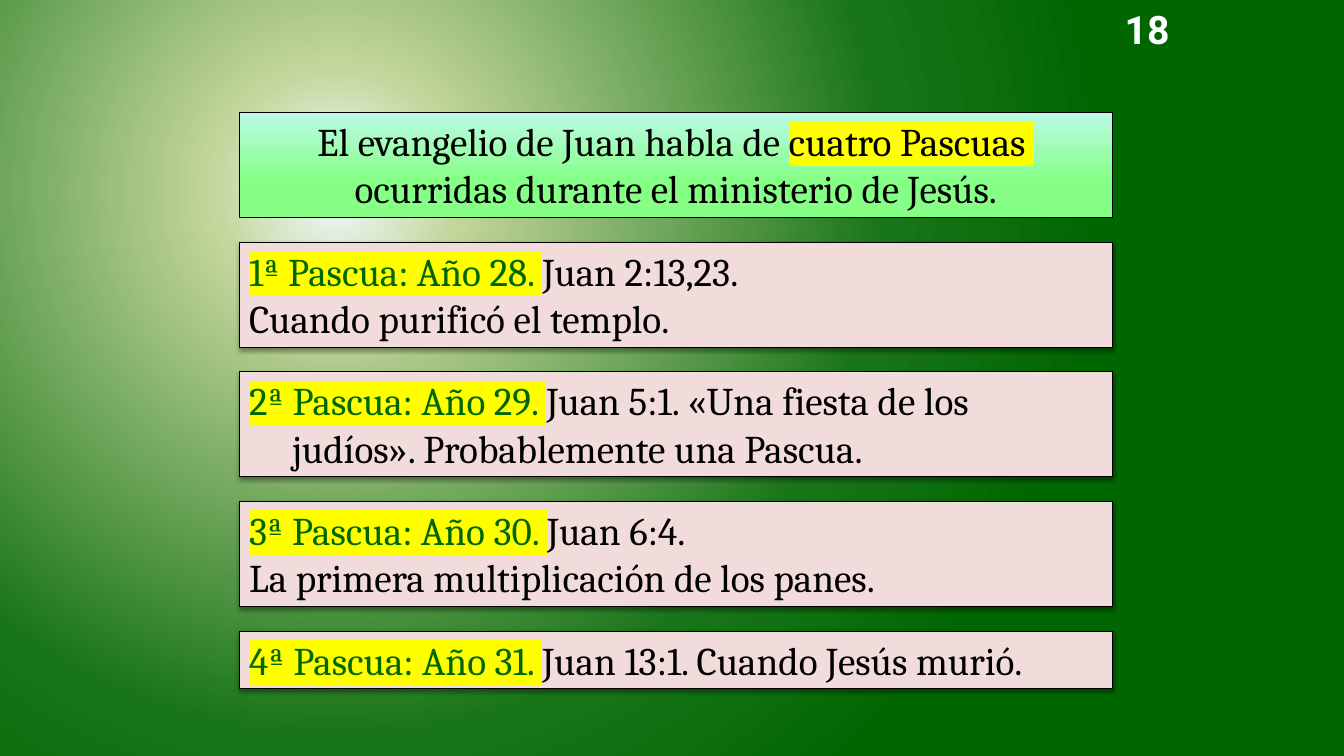
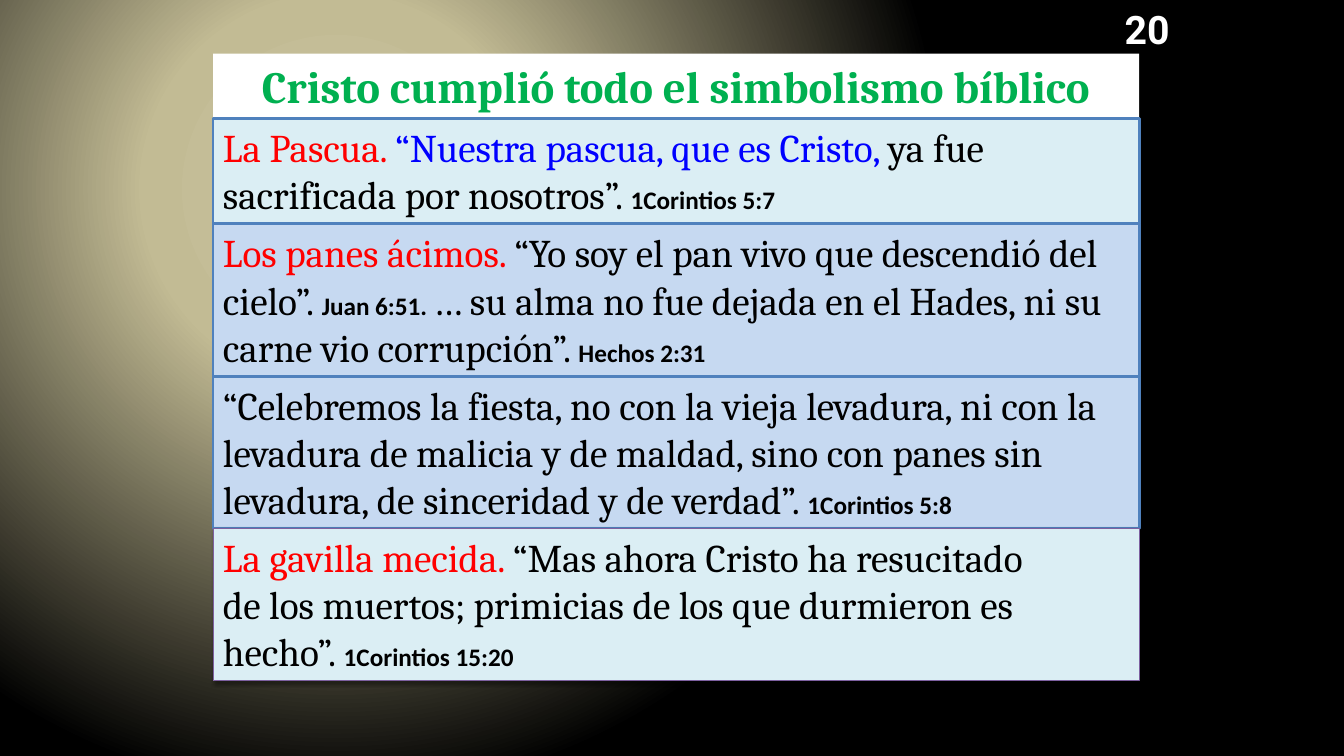
import pptx
import pptx.dml.color
import pptx.enum.shapes
import pptx.enum.text
import pptx.oxml
import pptx.oxml.ns
import pptx.util

Cm, Pt = pptx.util.Cm, pptx.util.Pt
qn = pptx.oxml.ns.qn
NS = pptx.oxml.ns.nsdecls("a")
ALIGN = pptx.enum.text.PP_ALIGN

# Run styles: size, font, colour, bold, highlight
STYLES = {
    "body": (28, "Cambria", "000000", False, None),
    "mark": (28, "Cambria", "000000", False, "FFFF00"),
    "feast": (28, "Cambria", "006600", False, "FFFF00"),
    "symbol": (28, "Cambria", "FF0000", False, None),
    "christ": (28, "Cambria", "0000FF", False, None),
    "verse": (18, "Calibri", "000000", True, None),
    "title": (32, "Cambria", "00B050", True, None),
    "number": (28, "Roboto", "FFFFFF", True, None),
}
# Box styles: fill (None = gradient), line colour, line width, shadow
BOXES = {
    "heading": (None, "000000", 0.75, False),
    "pink": ("F2DCDB", "000000", 0.75, True),
    "white": ("FFFFFF", None, 0, False),
    "aqua": ("DBEEF4", "4F81BD", 2, False),
    "blue": ("C6D9F1", "4F81BD", 2, False),
    "last": ("DBEEF4", "7D60A0", 0.75, True),
}
HEADING_STOPS = [(0, "BDFBE8"), (65, "85FF85")]
DOWNWARD = '<a:lin %s ang="5400000" scaled="0"/>' % NS
RADIAL = ('<a:path %s path="circle"><a:fillToRect l="50000" t="50000" '
          'r="100000" b="100000"/></a:path>' % NS)
SHADOW = ('<a:outerShdw %s blurRad="39370" dist="20320" dir="5400000" rotWithShape="0">'
          '<a:srgbClr val="000000"><a:alpha val="38000"/></a:srgbClr></a:outerShdw>' % NS)
INDENT = Cm(1.08)

# Each box: style, height in cm, paragraphs of (run style, text); the first is the title
SLIDES = [
    {
        "number": "18", "left": 6.03, "top": 2.83, "width": 22, "gap": 0.62,
        "stops": [(4, "E8F1E8"), (16, "C3D69B"), (71, "197519"), (100, "006600")],
        "boxes": [
            ("heading", 2.65, [
                [("body", "El evangelio de Juan habla de "), ("mark", "cuatro Pascuas ")],
                [("body", "ocurridas durante el ministerio de Jesús.")]]),
            ("pink", 2.65, [
                [("feast", "1ª Pascua: Año 28. "), ("body", "Juan 2:13,23.")],
                [("body", "Cuando purificó el templo.")]]),
            ("pink", 2.65, [
                [("feast", "2ª Pascua: Año 29. "), ("body", "Juan 5:1. «Una fiesta de los")],
                [("body", "judíos». Probablemente una Pascua.")]]),
            ("pink", 2.65, [
                [("feast", "3ª Pascua: Año 30. "), ("body", "Juan 6:4.")],
                [("body", "La primera multiplicación de los panes.")]]),
            ("pink", 1.45, [
                [("feast", "4ª Pascua: Año 31. "), ("body", "Juan 13:1. Cuando Jesús murió.")]]),
        ],
    },
    {
        "number": "20", "left": 5.37, "top": 1.35, "width": 23.34, "gap": 0,
        "stops": [(0, "C9C39F"), (25, "C2BB94"), (79, "000000"), (89, "000000")],
        "boxes": [
            ("white", 1.64, [[("title", "Cristo cumplió todo el simbolismo bíblico")]]),
            ("aqua", 2.65, [
                [("symbol", "La Pascua. "), ("christ", "“Nuestra pascua, que es Cristo, "),
                 ("body", "ya fue sacrificada por nosotros”. "), ("verse", "1Corintios 5:7")]]),
            ("blue", 3.84, [
                [("symbol", "Los panes ácimos. "),
                 ("body", "“Yo soy el pan vivo que descendió del cielo”. "),
                 ("verse", "Juan 6:51. "),
                 ("body", "… su alma no fue dejada en el Hades, ni su carne vio corrupción”. "),
                 ("verse", "Hechos 2:31")]]),
            ("blue", 3.84, [
                [("body", "“Celebremos la fiesta, no con la vieja levadura, ni con la levadura "
                          "de malicia y de maldad, sino con panes sin levadura, de sinceridad "
                          "y de verdad”. "),
                 ("verse", "1Corintios 5:8")]]),
            ("last", 3.84, [
                [("symbol", "La gavilla mecida. "), ("body", "“Mas ahora Cristo ha resucitado")],
                [("body", "de los muertos; primicias de los que durmieron es hecho”. "),
                 ("verse", "1Corintios 15:20")]]),
        ],
    },
]


def rgb(value):
    return pptx.dml.color.RGBColor.from_string(value)


def set_gradient(fill, element, stops, direction):
    fill.gradient()
    grad = element.find(".//" + qn("a:gradFill"))
    grad.clear()
    marks = "".join('<a:gs pos="%d"><a:srgbClr val="%s"/></a:gs>' % (pos * 1000, color)
                    for pos, color in stops)
    grad.append(pptx.oxml.parse_xml("<a:gsLst %s>%s</a:gsLst>" % (NS, marks)))
    grad.append(pptx.oxml.parse_xml(direction))


prs = pptx.Presentation()
prs.slide_width, prs.slide_height = Cm(33.87), Cm(19.05)

for data in SLIDES:
    s = prs.slides.add_slide(prs.slide_layouts[5])
    set_gradient(s.background.fill, s._element, data["stops"], RADIAL)
    texts = []

    # Stacked boxes, the title on top
    top = data["top"]
    for i, (style, height, paras) in enumerate(data["boxes"]):
        place = Cm(data["left"]), Cm(top), Cm(data["width"]), Cm(height)
        if i == 0:
            sp = s.shapes.title
            sp.left, sp.top, sp.width, sp.height = place
        else:
            sp = s.shapes.add_shape(pptx.enum.shapes.MSO_SHAPE.RECTANGLE, *place)
            sp.shadow.inherit = False
        top += height + data["gap"]

        fill, line, weight, shadow = BOXES[style]
        if fill:
            sp.fill.solid()
            sp.fill.fore_color.rgb = rgb(fill)
        else:
            set_gradient(sp.fill, sp._element, HEADING_STOPS, DOWNWARD)
        if line:
            sp.line.color.rgb = rgb(line)
            sp.line.width = Pt(weight)
        else:
            sp.line.fill.background()
        if shadow:
            effects = sp._element.spPr.find(qn("a:effectLst"))
            effects.append(pptx.oxml.parse_xml(SHADOW))
        texts.append((sp.text_frame, paras, ALIGN.LEFT if i else ALIGN.CENTER, True))

    # Slide number
    sp = s.shapes.add_textbox(Cm(28.02), 0, Cm(1.78), Cm(1.45))
    texts.append((sp.text_frame, [[("number", data["number"])]], ALIGN.CENTER, False))

    # Text
    for tf, paras, align, wrap in texts:
        tf.word_wrap = wrap
        tf.auto_size = pptx.enum.text.MSO_AUTO_SIZE.SHAPE_TO_FIT_TEXT
        tf.vertical_anchor = pptx.enum.text.MSO_ANCHOR.TOP
        for j, runs in enumerate(paras):
            p = tf.add_paragraph() if j else tf.paragraphs[0]
            p.alignment = align
            if runs[0][1].startswith("judíos"):
                p._p.get_or_add_pPr().set("marL", str(INDENT))
            for name, text in runs:
                size, font, color, bold, highlight = STYLES[name]
                r = p.add_run()
                r.text = text
                r.font.size, r.font.name, r.font.bold = Pt(size), font, bold
                r.font.color.rgb = rgb(color)
                if highlight:
                    r.font._element.find(qn("a:solidFill")).addnext(pptx.oxml.parse_xml(
                        '<a:highlight %s><a:srgbClr val="%s"/></a:highlight>' % (NS, highlight)))

prs.save("out.pptx")
